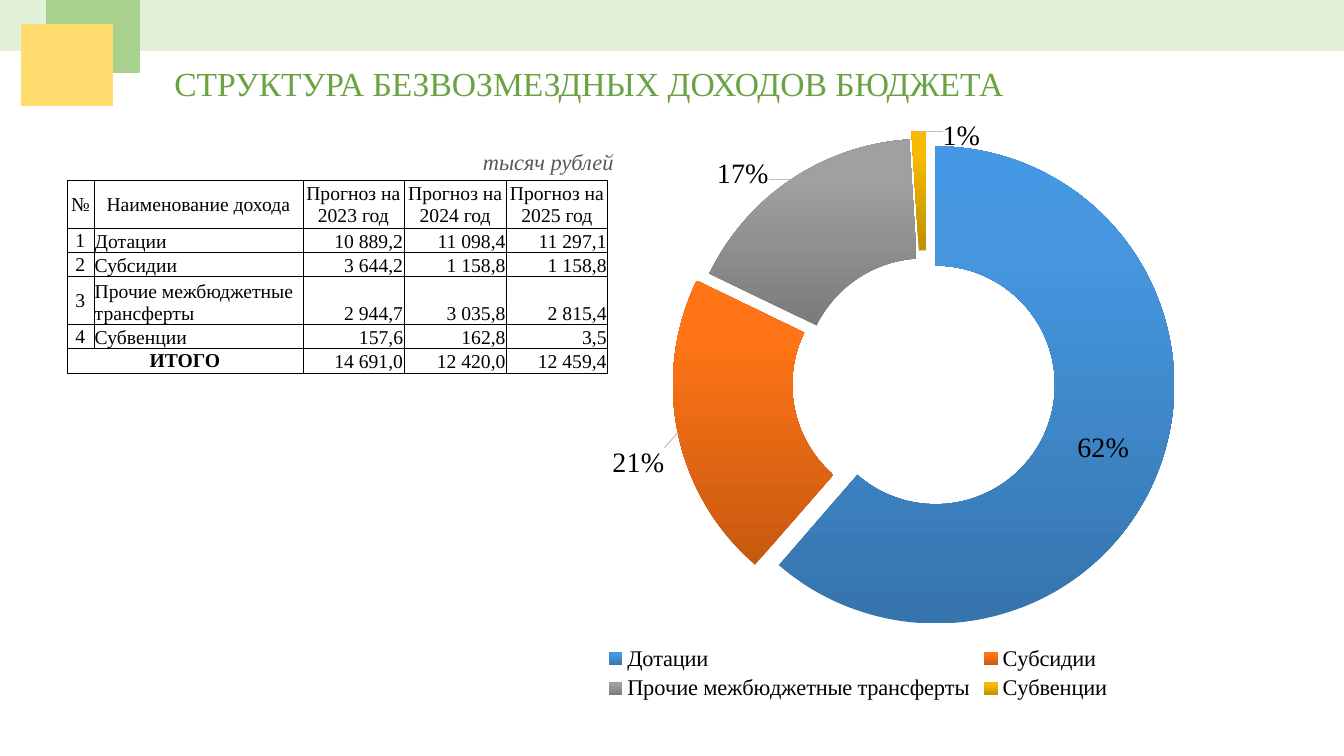
"""Build the slide on the structure of non-repayable budget revenues."""
from pptx import Presentation
from pptx.chart.data import CategoryChartData
from pptx.dml.color import RGBColor as RGB
from pptx.enum.chart import XL_CHART_TYPE as ChartType, XL_LEGEND_POSITION as LegendPosition
from pptx.enum.shapes import MSO_SHAPE as Shape
from pptx.enum.text import MSO_ANCHOR as Anchor, PP_ALIGN as Align
from pptx.oxml import parse_xml
from pptx.oxml.ns import nsdecls, qn
from pptx.util import Pt

FONT = "Times New Roman"
BLACK = RGB(0x00, 0x00, 0x00)
GRAY = RGB(0x59, 0x59, 0x59)
LEADER_GRAY = RGB(0xBF, 0xBF, 0xBF)
TITLE_GREEN = RGB(0x6A, 0xA3, 0x43)
PALE_GREEN = RGB(0xE2, 0xF0, 0xD9)
GREEN = RGB(0xA9, 0xD1, 0x8E)
YELLOW = RGB(0xFF, 0xDC, 0x6D)


def set_font(font, size, color=BLACK, **extra):
    values = {"name": FONT, "size": Pt(size), **extra}
    for name, value in values.items():
        setattr(font, name, value)
    font.color.rgb = color


def manual_layout(inner="", **values):
    parts = "".join(f'<c:{name} val="{value}"/>' for name, value in values.items())
    return parse_xml(f'<c:layout {nsdecls("c")}><c:manualLayout>{inner}{parts}'
                     '</c:manualLayout></c:layout>')


presentation = Presentation()
presentation.slide_width, presentation.slide_height = Pt(960), Pt(540)
slide = presentation.slides.add_slide(presentation.slide_layouts[6])

captions = [
    ("СТРУКТУРА БЕЗВОЗМЕЗДНЫХ ДОХОДОВ БЮДЖЕТА", (117.4, 41.2, 617, 36), 24, TITLE_GREEN, False),
    ("тысяч рублей", (337.9, 102.2, 109.4, 26.6), 16, GRAY, True),
]
for text, box, size, color, italic in captions:
    text_frame = slide.shapes.add_textbox(*map(Pt, box)).text_frame
    text_frame.word_wrap = False
    run = text_frame.paragraphs[0].add_run()
    run.text = text
    set_font(run.font, size, color, italic=italic)

decorations = [
    ((0, 0, 960, 36), PALE_GREEN),
    ((33.4, 0, 65.9, 51.5), GREEN),
    ((15.5, 18, 64.8, 57.6), YELLOW),
]
for box, color in decorations:
    shape = slide.shapes.add_shape(Shape.RECTANGLE, *map(Pt, box))
    shape.shadow.inherit = False
    shape.fill.solid()
    shape.fill.fore_color.rgb = color
    shape.line.color.rgb = color
    shape.line.width = Pt(1)

rows = [
    ("№", "Наименование дохода", "Прогноз на 2023 год", "Прогноз на 2024 год", "Прогноз на 2025 год"),
    ("1", "Дотации", "10 889,2", "11 098,4", "11 297,1"),
    ("2", "Субсидии", "3 644,2", "1 158,8", "1 158,8"),
    ("3", "Прочие межбюджетные трансферты", "2 944,7", "3 035,8", "2 815,4"),
    ("4", "Субвенции", "157,6", "162,8", "3,5"),
    ("ИТОГО", "", "14 691,0", "12 420,0", "12 459,4"),
]
widths = [19.3, 149.3, 72.2, 73.2, 72.2]
heights = [15.1, 15.1, 15.1, 30.2, 15.1, 15.1]
table = slide.shapes.add_table(len(rows), len(widths), Pt(47.8), Pt(128.9),
                               Pt(sum(widths)), Pt(sum(heights))).table
table.first_row = table.horz_banding = False
for column, width in zip(table.columns, widths):
    column.width = Pt(width)
for row, height in zip(table.rows, heights):
    row.height = Pt(height)
table.cell(5, 0).merge(table.cell(5, 1))

cell_format = {"margin_left": Pt(0.6), "margin_right": Pt(0.6),
               "margin_top": Pt(0.5), "margin_bottom": Pt(0)}
for row_index, texts in enumerate(rows):
    for column_index, text in enumerate(texts):
        cell = table.cell(row_index, column_index)
        centered = row_index == 0 or column_index == 0
        for name, value in cell_format.items():
            setattr(cell, name, value)
        cell.vertical_anchor = Anchor.MIDDLE if centered else Anchor.BOTTOM
        properties = cell._tc.get_or_add_tcPr()
        for side in ("lnL", "lnR", "lnT", "lnB"):
            properties.append(parse_xml(
                f'<a:{side} {nsdecls("a")} w="6350"><a:solidFill><a:srgbClr val="{BLACK}"/>'
                f'</a:solidFill></a:{side}>'))
        cell.fill.background()
        if text:
            paragraph = cell.text_frame.paragraphs[0]
            paragraph.alignment = (Align.CENTER if centered else
                                   Align.LEFT if column_index == 1 else Align.RIGHT)
            run = paragraph.add_run()
            run.text = text
            set_font(run.font, 14, bold=text == "ИТОГО")

chart_data = CategoryChartData()
chart_data.categories = ["Дотации ", "Субсидии ", "Прочие межбюджетные трансферты", "Субвенции "]
chart_data.add_series("Series 1", [62, 21, 17, 1])
chart = slide.shapes.add_chart(ChartType.DOUGHNUT, Pt(324), Pt(66.2), Pt(581.8), Pt(437.8),
                               chart_data).chart
chart.has_title = False
chart.font.name, chart.font.size = "Calibri", Pt(10)
chart.has_legend = True
chart.legend.position = LegendPosition.BOTTOM
chart.legend.include_in_layout = False
set_font(chart.legend.font, 16)

plot_area = chart._chartSpace.chart.plotArea
for layout in plot_area.findall(qn("c:layout")):
    plot_area.remove(layout)
plot_area.insert(0, manual_layout('<c:layoutTarget val="inner"/>', xMode="edge", yMode="edge",
                                  x=0.288, y=0.082, w=0.586, h=0.779))
plot = chart.plots[0]
plot.vary_by_categories = True
plot._element.find(qn("c:holeSize")).set("val", "50")

series = plot.series[0]
labels = series.data_labels
label_format = {"show_percentage": False, "show_value": True, "show_legend_key": False,
                "number_format": '0"%"', "number_format_is_linked": False}
for name, value in label_format.items():
    setattr(labels, name, value)
set_font(labels.font, 20)
leader_flag = labels._element.find(qn("c:showLeaderLines"))
if leader_flag is None:
    leader_flag = parse_xml(f'<c:showLeaderLines {nsdecls("c")}/>')
    labels._element.append(leader_flag)
leader_flag.set("val", "1")
leader_flag.addnext(parse_xml(
    f'<c:leaderLines {nsdecls("c", "a")}><c:spPr><a:ln w="9525"><a:solidFill>'
    f'<a:srgbClr val="{LEADER_GRAY}"/></a:solidFill></a:ln></c:spPr></c:leaderLines>'))

slices = [
    (("3674AD", "4697E0", "4498E4"), 8, None),
    (("C65910", "FF7416", "FF7517"), 13, (-0.12, 0.07)),
    (("7B7B7B", "A0A0A0", "A1A1A1"), 4, (-0.1, -0.09)),
    (("BE8F00", "F7BA00", "F8BB00"), 10, (0.05, -0.09)),
]
for index, (colors, explosion, label_shift) in enumerate(slices):
    point = series.points[index]
    point.format.line.fill.background()
    stops = "".join(f'<a:gs pos="{position}"><a:srgbClr val="{color}"/></a:gs>'
                    for position, color in zip((0, 80000, 100000), colors))
    point_properties = series._element.findall(qn("c:dPt"))[index].find(qn("c:spPr"))
    point_properties.insert(0, parse_xml(
        f'<a:gradFill {nsdecls("a")} rotWithShape="1"><a:gsLst>{stops}</a:gsLst>'
        '<a:lin ang="16200000" scaled="0"/></a:gradFill>'))
    point_properties.addprevious(parse_xml(f'<c:explosion {nsdecls("c")} val="{explosion}"/>'))
    if label_shift:
        set_font(point.data_label.font, 20)
        label = labels._element.findall(qn("c:dLbl"))[-1]
        layout = manual_layout(x=label_shift[0], y=label_shift[1])
        label.find(qn("c:idx")).addnext(layout)
        layout.addnext(parse_xml(
            f'<c:numFmt {nsdecls("c")} formatCode="0&quot;%&quot;" sourceLinked="0"/>'))

presentation.save("out.pptx")
